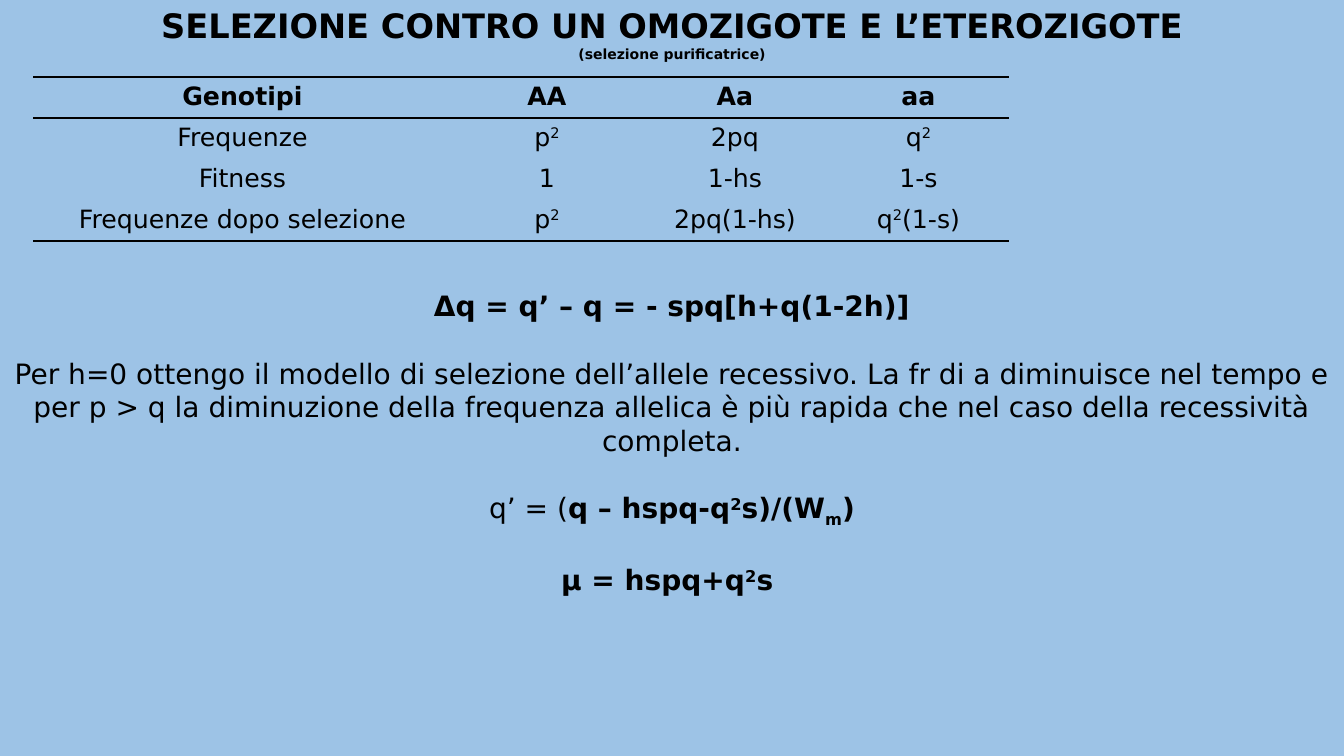
from lxml import etree
from pptx import Presentation
from pptx.dml.color import RGBColor
from pptx.enum.text import PP_ALIGN
from pptx.oxml.ns import qn
from pptx.util import Pt

CENTER = PP_ALIGN.CENTER
FONT = "DejaVu Sans"
COLORS = {"background": "9DC3E6", "ink": "000000"}
PX = 12192000 / 1344
NO_STYLE = "{2D5ABB26-0587-4C30-8999-92F81FD0307C}"
SUPER, SUB = 30000, -25000

# A run is (text, baseline shift); plain strings have no shift.
SQUARE = ("2", SUPER)
TITLE = [
    (["SELEZIONE CONTRO UN OMOZIGOTE E L’ETEROZIGOTE"], 24),
    (["(selezione purificatrice)"], 10),
]
GENOTYPES = [
    [["Genotipi"], ["AA"], ["Aa"], ["aa"]],
    [["Frequenze"], ["p", SQUARE], ["2pq"], ["q", SQUARE]],
    [["Fitness"], ["1"], ["1-hs"], ["1-s"]],
    [["Frequenze dopo selezione"], ["p", SQUARE], ["2pq(1-hs)"], ["q", SQUARE, "(1-s)"]],
]
PLAIN_START = "q’ = ("
BODY = [
    (["Δq = q’ – q = - spq[h+q(1-2h)]"], True),
    (["Per h=0 ottengo il modello di selezione dell’allele recessivo. "
      "La fr di a diminuisce nel tempo e per p > q la diminuzione della "
      "frequenza allelica è più rapida che nel caso della recessività completa."], False),
    ([PLAIN_START, "q – hspq-q", SQUARE, "s)/(W", ("m", SUB), ")"], True),
    (["μ = hspq+q", SQUARE, "s "], True),
]
TITLE_BOX = (0, 0, 1344, 67)
BODY_BOX = (0, 284, 1344, 316)
TABLE_AT = (33, 77)
COLUMNS = [419, 190, 186, 181]
ROW_HEIGHT = 41


def px(n):
    return round(n * PX)


def fill_paragraph(p, runs, size, bold):
    p.alignment = CENTER
    p.font.name, p.font.size, p.font.bold = FONT, Pt(size), bold
    p.font.color.rgb = RGBColor.from_string(COLORS["ink"])
    for run in runs:
        text, shift = (run, 0) if isinstance(run, str) else run
        r = p.add_run()
        r.text = text
        if shift:
            r.font._element.set("baseline", str(shift))
        if text == PLAIN_START:
            r.font.bold = False


def add_text(slide, box, paragraphs, gap=0):
    """Add a text box; paragraphs are (runs, size, bold), gap is in points."""
    tf = slide.shapes.add_textbox(*map(px, box)).text_frame
    tf.word_wrap = True
    for i, paragraph in enumerate(paragraphs):
        p = tf.add_paragraph() if i else tf.paragraphs[0]
        if i and gap:
            p.space_before = Pt(gap)
        fill_paragraph(p, *paragraph)


def add_rule(cell, side):
    """Draw a thin border on the top (lnT) or bottom (lnB) of a cell."""
    ln = etree.SubElement(cell._tc.get_or_add_tcPr(), qn(f"a:{side}"), w=str(Pt(1)))
    fill = etree.SubElement(ln, qn("a:solidFill"))
    etree.SubElement(fill, qn("a:srgbClr"), val=COLORS["ink"])


def add_genotype_table(slide):
    last = len(GENOTYPES) - 1
    size = (sum(COLUMNS), ROW_HEIGHT * len(GENOTYPES))
    table = slide.shapes.add_table(len(GENOTYPES), len(COLUMNS),
                                   *map(px, TABLE_AT + size)).table
    table.first_row = table.horz_banding = False
    table._tbl.tblPr.find(qn("a:tableStyleId")).text = NO_STYLE
    for column, width in zip(table.columns, COLUMNS):
        column.width = px(width)
    for i, row in enumerate(GENOTYPES):
        for j, runs in enumerate(row):
            cell = table.cell(i, j)
            if i == 0:
                add_rule(cell, "lnT")
            if i in (0, last):
                add_rule(cell, "lnB")
            cell.fill.background()
            fill_paragraph(cell.text_frame.paragraphs[0], runs, 18, i == 0)


def main():
    prs = Presentation()
    prs.slide_width, prs.slide_height = px(1344), px(756)
    slide = prs.slides.add_slide(prs.slide_layouts[6])
    background = slide.background.fill
    background.solid()
    background.fore_color.rgb = RGBColor.from_string(COLORS["background"])

    add_text(slide, TITLE_BOX, [(runs, size, True) for runs, size in TITLE])
    add_genotype_table(slide)
    add_text(slide, BODY_BOX, [(runs, 20, bold) for runs, bold in BODY], gap=24)
    prs.save("out.pptx")


if __name__ == "__main__":
    main()
